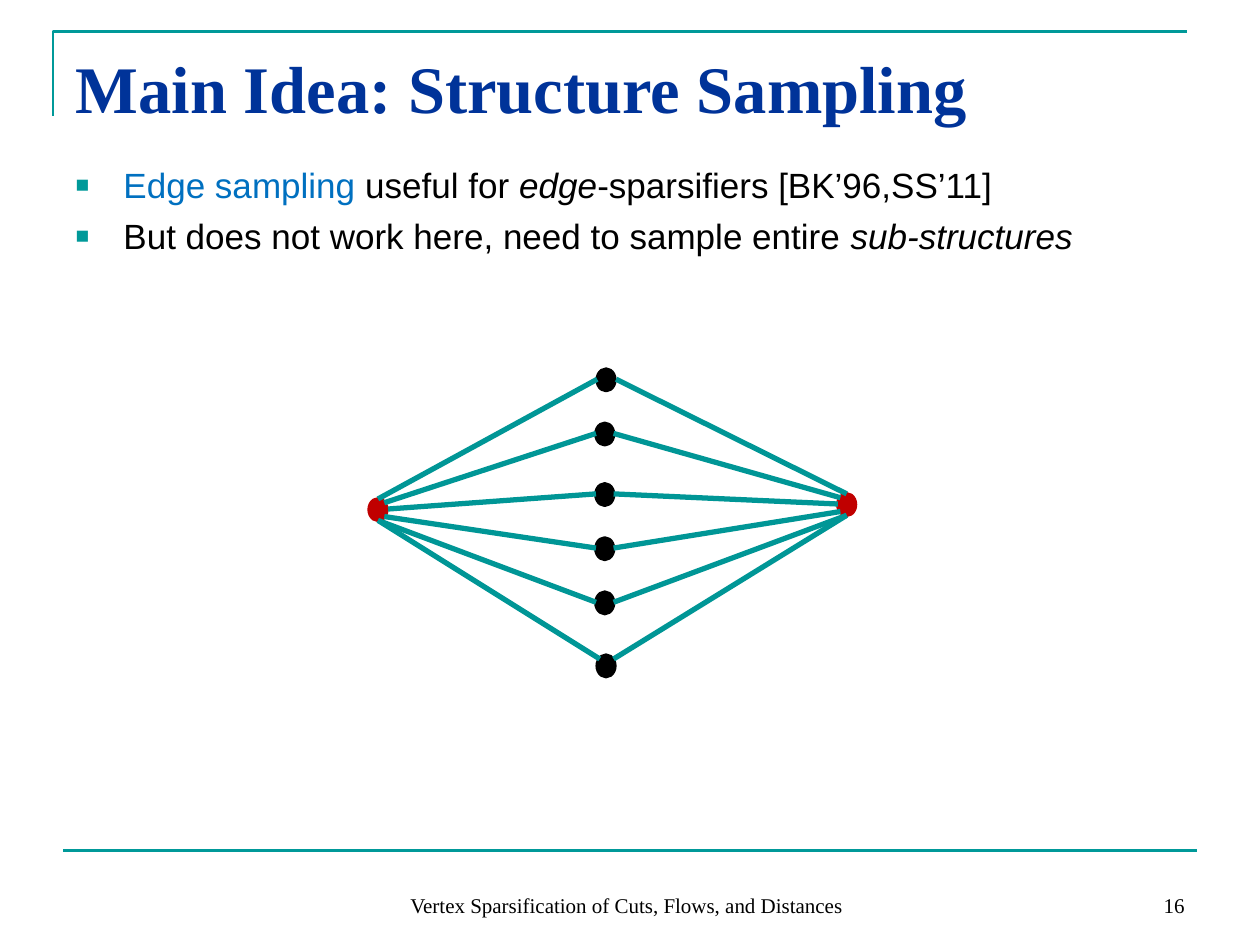
"""Build the slide on structure sampling, with its two-terminal graph."""
from lxml.etree import SubElement
from pptx import Presentation
from pptx.dml.color import RGBColor
from pptx.enum.shapes import MSO_CONNECTOR, MSO_SHAPE
from pptx.enum.text import MSO_ANCHOR, MSO_AUTO_SIZE, PP_ALIGN
from pptx.oxml.ns import qn
from pptx.util import Inches, Pt

TEAL = RGBColor(0x00, 0x99, 0x99)
EDGE_TEAL = RGBColor(0x00, 0x96, 0x96)
NAVY = RGBColor(0x00, 0x33, 0x99)
BLUE = RGBColor(0x00, 0x70, 0xC0)
RED = RGBColor(0xC0, 0x00, 0x00)
BLACK = RGBColor(0x00, 0x00, 0x00)

TITLE = "Main Idea: Structure Sampling"
TITLE_FORMAT = {"name": "Times New Roman", "size": Pt(38), "bold": True}
BODY_FORMAT = {"name": "Arial", "size": Pt(20)}
FOOTER_FORMAT = {"name": "Times New Roman", "size": Pt(12)}

BULLETS = [
    [("Edge sampling", BLUE, False), (" useful for ", BLACK, False),
     ("edge", BLACK, True), ("-sparsifiers [BK’96,SS’11]", BLACK, False)],
    [("But does not work here, need to sample entire ", BLACK, False),
     ("sub-structures", BLACK, True)],
]
FOOTERS = [
    ("Vertex Sparsification of Cuts, Flows, and Distances", (2.61, 6.83, 4.73, 0.5), PP_ALIGN.CENTER),
    ("16", (7.17, 6.83, 2.33, 0.5), PP_ALIGN.RIGHT),
]
NODE_SIZE = (0.14, 0.17)
TERMINALS = [(2.93, 3.96), (6.65, 3.92)]
MIDDLE_NODES = [(4.74, 2.93), (4.73, 3.36), (4.73, 3.84), (4.73, 4.27), (4.73, 4.7), (4.74, 5.2)]
EDGE_PATHS = [
    [(3, 3.96), (4.74, 3.01), (4.89, 3.01), (6.72, 3.92)],
    [(3.05, 3.99), (4.73, 3.44), (4.87, 3.44), (6.67, 3.95)],
    [(3.08, 4.04), (4.73, 3.92), (4.87, 3.92), (6.65, 4)],
    [(3.05, 4.1), (4.73, 4.35), (4.87, 4.35), (6.67, 4.06)],
    [(3, 4.13), (4.73, 4.78), (4.87, 4.78), (6.72, 4.09)],
    [(3, 4.13), (4.76, 5.23), (4.87, 5.23), (6.72, 4.09)],
]


def inches(values):
    return [Inches(value) for value in values]


def place(shape, bounds):
    for name, value in zip(("left", "top", "width", "height"), inches(bounds)):
        setattr(shape, name, value)


def add_span(para, text, color, formats):
    span = para.add_run()
    span.text = text
    for name, value in formats.items():
        setattr(span.font, name, value)
    span.font.color.rgb = color


def set_frame(shape, anchor):
    frame = shape.text_frame
    formats = {"word_wrap": True, "auto_size": MSO_AUTO_SIZE.NONE, "vertical_anchor": anchor}
    for name, value in formats.items():
        setattr(frame, name, value)
    return frame


def add_bullet(para):
    para.space_before = Pt(5)
    properties = para._p.get_or_add_pPr()
    properties.set("marL", str(Inches(0.38)))
    properties.set("indent", str(Inches(-0.38)))
    color = SubElement(properties, qn("a:buClr"))
    SubElement(color, qn("a:srgbClr"), val=str(TEAL))
    SubElement(properties, qn("a:buSzPct"), val="65000")
    SubElement(properties, qn("a:buFont"), typeface="Arial")
    SubElement(properties, qn("a:buChar"), char="■")


def add_line(page, start, end, color, width):
    line = page.shapes.add_connector(MSO_CONNECTOR.STRAIGHT, *inches(start + end))
    line.line.color.rgb = color
    line.line.width = Pt(width)
    SubElement(line._element.spPr, qn("a:effectLst"))


def add_frame_lines(page):
    builder = page.shapes.build_freeform(Inches(0.42), Inches(0.92))
    builder.add_line_segments([inches((0.42, 0.25)), inches((9.42, 0.25))], close=False)
    corner = builder.convert_to_shape()
    corner.shadow.inherit = False
    corner.fill.background()
    corner.line.color.rgb = TEAL
    corner.line.width = Pt(1.5)
    add_line(page, (0.5, 6.75), (9.5, 6.75), TEAL, 1.5)


def add_text(page):
    title, body = page.placeholders
    place(title, (0.5, 0.3, 9, 0.78))
    para = set_frame(title, MSO_ANCHOR.MIDDLE).paragraphs[0]
    para.alignment = PP_ALIGN.LEFT
    add_span(para, TITLE, NAVY, TITLE_FORMAT)

    place(body, (0.5, 1.25, 9, 5.45))
    frame = set_frame(body, MSO_ANCHOR.TOP)
    for index, spans in enumerate(BULLETS):
        para = frame.add_paragraph() if index else frame.paragraphs[0]
        add_bullet(para)
        for text, color, italic in spans:
            add_span(para, text, color, {**BODY_FORMAT, "italic": italic})

    for text, bounds, alignment in FOOTERS:
        box = page.shapes.add_textbox(*inches(bounds))
        para = set_frame(box, MSO_ANCHOR.BOTTOM).paragraphs[0]
        para.alignment = alignment
        add_span(para, text, BLACK, FOOTER_FORMAT)


def add_graph(page):
    for color, positions in ((RED, TERMINALS), (BLACK, MIDDLE_NODES)):
        for position in positions:
            node = page.shapes.add_shape(MSO_SHAPE.OVAL, *inches(position + NODE_SIZE))
            node.shadow.inherit = False
            node.fill.solid()
            node.fill.fore_color.rgb = color
            node.line.color.rgb = color
            node.line.width = Pt(2)
    for left, inner_left, inner_right, right in EDGE_PATHS:
        add_line(page, left, inner_left, EDGE_TEAL, 3)
        add_line(page, inner_right, right, EDGE_TEAL, 3)


def main():
    deck = Presentation()
    deck.slide_width, deck.slide_height = inches((10, 7.5))
    page = deck.slides.add_slide(deck.slide_layouts[1])
    add_frame_lines(page)
    add_text(page)
    add_graph(page)
    deck.save("out.pptx")


if __name__ == "__main__":
    main()
